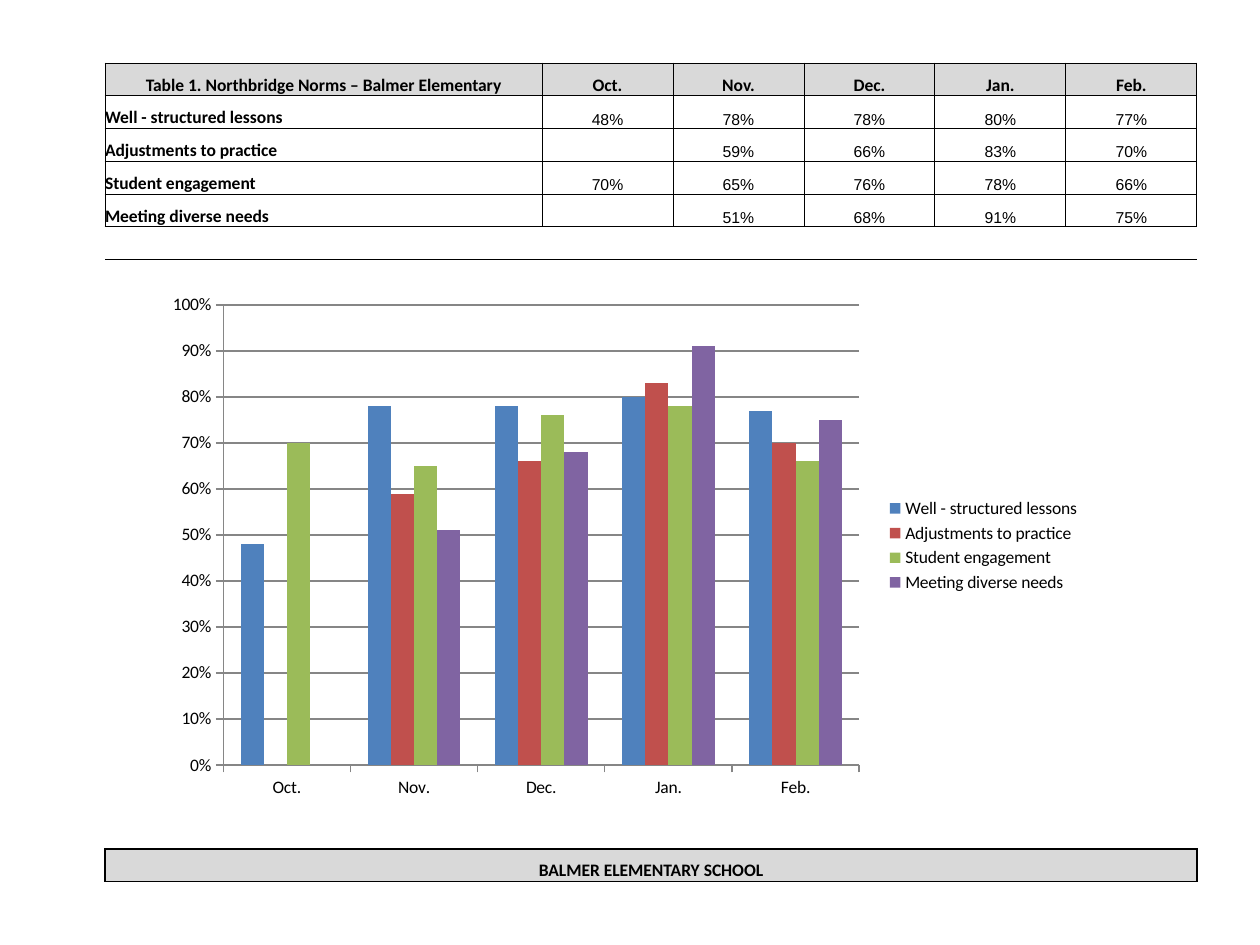
from lxml import etree
from pptx import Presentation
from pptx import util as u
from pptx.chart import data as chart_data
from pptx.dml.color import RGBColor
from pptx.enum import chart as ch, text
from pptx.oxml import ns

EMU_PER_PX = 914400 / 126
BLACK = RGBColor(0x00, 0x00, 0x00)
GREY = RGBColor(0xD9, 0xD9, 0xD9)
AXIS_GREY = RGBColor(0x86, 0x86, 0x86)
BLUE = RGBColor(0x4F, 0x81, 0xBD)
RED = RGBColor(0xC0, 0x50, 0x4D)
GREEN = RGBColor(0x9B, 0xBB, 0x59)
PURPLE = RGBColor(0x80, 0x64, 0xA2)
PLAIN_TABLE = "{2D5ABB26-0587-4C30-8999-92F81FD0307C}"

TITLE = "Table 1. Northbridge Norms – Balmer Elementary"
SCHOOL = "BALMER ELEMENTARY SCHOOL"
MONTHS = ["Oct.", "Nov.", "Dec.", "Jan.", "Feb."]
NORMS = [
    ("Well - structured lessons", [0.48, 0.78, 0.78, 0.80, 0.77], BLUE),
    ("Adjustments to practice", [None, 0.59, 0.66, 0.83, 0.70], RED),
    ("Student engagement", [0.70, 0.65, 0.76, 0.78, 0.66], GREEN),
    ("Meeting diverse needs", [None, 0.51, 0.68, 0.91, 0.75], PURPLE),
]
ROW_COUNT = 25


def px(n):
    return u.Emu(round(n * EMU_PER_PX))


def add_borders(cell, sides, points):
    props = cell._tc.get_or_add_tcPr()
    for side in sides:
        edge = etree.SubElement(props, ns.qn(f"a:ln{side}"), w=str(u.Pt(points)))
        paint = etree.SubElement(edge, ns.qn("a:solidFill"))
        etree.SubElement(paint, ns.qn("a:srgbClr"), val=str(BLACK))


def fill_cell(cell, words, centred=True, size=10, face="Calibri", bold=True, shade=None):
    if shade is None:
        cell.fill.background()
    else:
        cell.fill.solid()
        cell.fill.fore_color.rgb = shade
    cell.margin_left = cell.margin_right = cell.margin_top = cell.margin_bottom = 0
    cell.vertical_anchor = text.MSO_ANCHOR.BOTTOM
    line = cell.text_frame.paragraphs[0]
    line.alignment = text.PP_ALIGN.CENTER if centred else text.PP_ALIGN.LEFT
    if not words:
        etree.SubElement(line._p, ns.qn("a:endParaRPr"), sz=str(size * 100))
        return
    run = line.add_run()
    run.text = words
    run.font.size = u.Pt(size)
    run.font.name = face
    run.font.bold = bold
    run.font.color.rgb = BLACK


def add_norms_table(slide, left, top, width, height):
    frame = slide.shapes.add_table(
        ROW_COUNT, len(MONTHS) + 1, px(left), px(top), px(width), px(height))
    norms = frame.table
    norms.first_row = norms.horz_banding = False
    norms._tbl.tblPr.find(ns.qn("a:tableStyleId")).text = PLAIN_TABLE

    month_width = round(width * 0.12)
    norms.columns[0].width = px(width - month_width * len(MONTHS))
    for month in range(1, len(MONTHS) + 1):
        norms.columns[month].width = px(month_width)
    for row in norms.rows:
        row.height = px(height / ROW_COUNT)

    last = ROW_COUNT - 1
    for r in range(ROW_COUNT):
        for c in range(len(MONTHS) + 1):
            cell = norms.cell(r, c)
            if r <= len(NORMS):
                add_borders(cell, "LRTB", 0.5)
            elif r == len(NORMS) + 1:
                add_borders(cell, "T", 0.5)
            elif r == last - 1:
                add_borders(cell, "B", 1)
            elif r == last:
                add_borders(cell, "LRTB", 1)

            if r == 0:
                fill_cell(cell, ([TITLE] + MONTHS)[c], shade=GREY)
            elif r == last:
                fill_cell(cell, SCHOOL if c == 0 else "", shade=GREY)
            elif r > len(NORMS):
                fill_cell(cell, "")
            elif c == 0:
                fill_cell(cell, NORMS[r - 1][0], centred=False)
            else:
                share = NORMS[r - 1][1][c - 1]
                words = "" if share is None else f"{share:.0%}"
                fill_cell(cell, words, size=9, face="Arial", bold=False)
    norms.cell(last, 0).merge(norms.cell(last, len(MONTHS)))


def place_plot(chart, **fractions):
    plot_area = chart._chartSpace.chart.plotArea
    for old in plot_area.findall(ns.qn("c:layout")):
        plot_area.remove(old)
    layout = etree.Element(ns.qn("c:layout"))
    manual = etree.SubElement(layout, ns.qn("c:manualLayout"))
    settings = {"layoutTarget": "inner", "xMode": "edge", "yMode": "edge", **fractions}
    for name, value in settings.items():
        etree.SubElement(manual, ns.qn(f"c:{name}"), val=str(value))
    plot_area.insert(0, layout)


def add_norms_chart(slide, left, top, width, height):
    shares = chart_data.CategoryChartData(number_format="0%")
    shares.categories = MONTHS
    for name, values, _ in NORMS:
        shares.add_series(name, values)
    chart = slide.shapes.add_chart(
        ch.XL_CHART_TYPE.COLUMN_CLUSTERED,
        px(left), px(top), px(width), px(height), shares).chart
    chart.has_title = False
    chart.font.size = u.Pt(10)
    chart.font.name = "Calibri"
    chart.font.color.rgb = BLACK

    columns = chart.plots[0]
    columns.gap_width = 150
    columns.overlap = 0
    columns.vary_by_categories = False
    for series, (_, _, color) in zip(columns.series, NORMS):
        series.format.fill.solid()
        series.format.fill.fore_color.rgb = color
        series.invert_if_negative = False

    percents = chart.value_axis
    percents.minimum_scale, percents.maximum_scale, percents.major_unit = 0, 1, 0.1
    percents.has_major_gridlines = True
    percents.tick_labels.number_format = "0%"
    percents.tick_labels.number_format_is_linked = False
    for axis in (percents, chart.category_axis):
        axis.major_tick_mark = ch.XL_TICK_MARK.OUTSIDE
    for part in (percents, chart.category_axis, percents.major_gridlines):
        part.format.line.color.rgb = AXIS_GREY
        part.format.line.width = u.Pt(0.75)

    chart.has_legend = True
    chart.legend.position = ch.XL_LEGEND_POSITION.RIGHT
    chart.legend.include_in_layout = False
    place_plot(chart, x=0.07, y=0.04, w=0.68, h=0.88)


def main():
    deck = Presentation()
    deck.slide_width, deck.slide_height = px(1260), px(945)
    slide = deck.slides.add_slide(deck.slide_layouts[6])
    add_norms_table(slide, 105, 63, 1092, 819)
    add_norms_chart(slide, 158, 284, 935, 523)
    deck.save("out.pptx")


if __name__ == "__main__":
    main()
